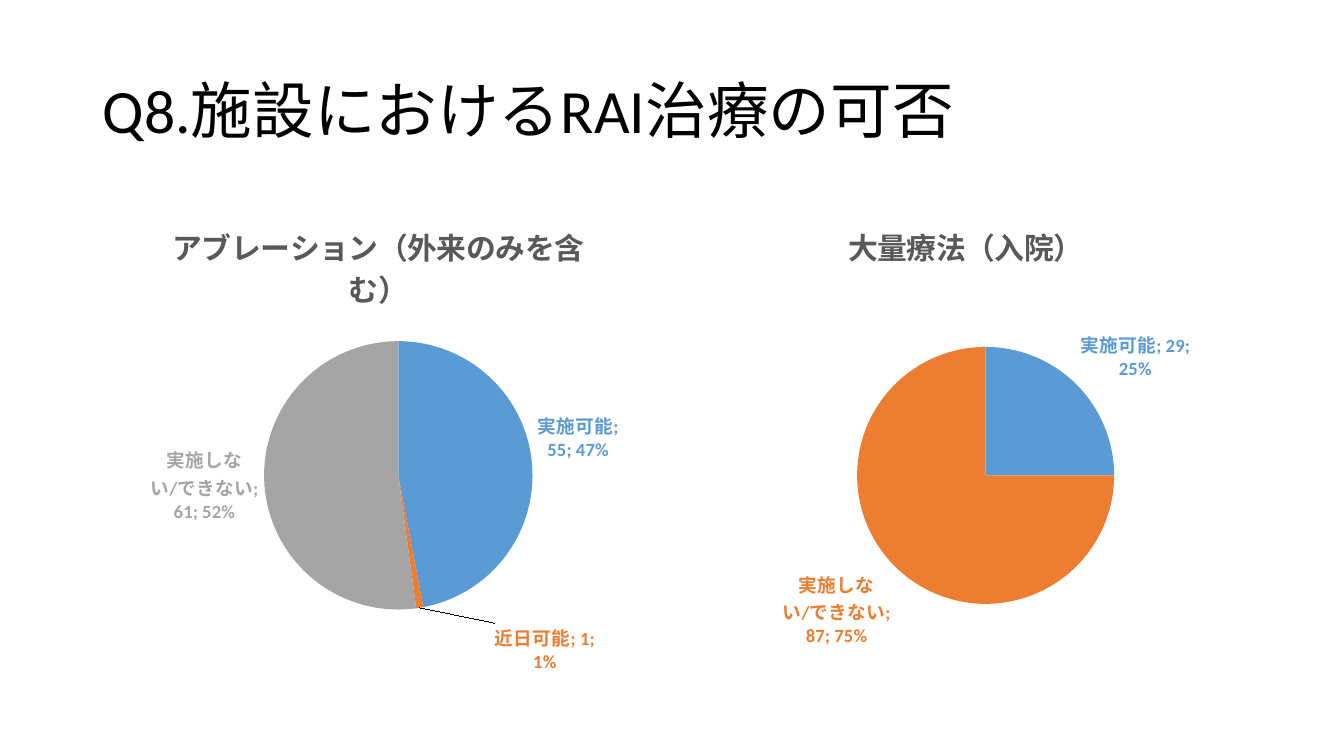
import lxml.etree
import pptx
import pptx.chart.data
import pptx.dml.color
import pptx.enum.chart
import pptx.enum.text
import pptx.oxml.ns
import pptx.util

WIDTH = pptx.util.Inches(13.33)
HEIGHT = pptx.util.Inches(7.5)
FONT = "Calibri"
SLICE_COLORS = ["5B9BD5", "ED7D31", "A5A5A5"]
MARGIN = 0.069
COLUMN_STEP = 0.437
CHART_WIDTH = 0.425
CHART_TOP = 0.267
CHART_HEIGHT = 0.635


def color(value):
    return pptx.dml.color.RGBColor.from_string(value)


def style_font(font, size, value, bold=False):
    font.name = FONT
    font.size = pptx.util.Pt(size)
    font.bold = bold
    font.color.rgb = color(value)


def add_run(paragraph, text, size, value, bold=False):
    run = paragraph.add_run()
    run.text = text
    style_font(run.font, size, value, bold)


def add_element(parent, tag, value=None):
    element = lxml.etree.SubElement(parent, pptx.oxml.ns.qn(tag))
    if value is not None:
        element.set("val", str(value))
    return element


def make_layout(settings):
    layout = lxml.etree.Element(pptx.oxml.ns.qn("c:layout"))
    manual = add_element(layout, "c:manualLayout")
    for name, value in settings.items():
        add_element(manual, f"c:{name}", value)
    return layout


def place_plot(chart, left, top, width, height):
    plot_area = chart.element.xpath("c:chart/c:plotArea")[0]
    for layout in plot_area.xpath("c:layout"):
        plot_area.remove(layout)
    plot_area.insert(0, make_layout({
        "layoutTarget": "inner", "xMode": "edge", "yMode": "edge",
        "x": left, "y": top, "w": width, "h": height}))


def style_slice(point, value):
    point.format.fill.solid()
    point.format.fill.fore_color.rgb = color(value)
    point.format.line.fill.background()
    label = point.data_label
    style_font(label.font, 13.3, value, True)
    label.position = pptx.enum.chart.XL_LABEL_POSITION.OUTSIDE_END


def complete_labels(chart, offsets):
    for index, label in enumerate(chart.element.xpath(".//c:dLbl")):
        for name in ("showVal", "showCatName", "showPercent"):
            label.xpath(f"c:{name}")[0].set("val", "1")
        add_element(label, "c:separator").text = "; "
        if index in offsets:
            x, y = offsets[index]
            label.insert(1, make_layout({"x": x, "y": y}))


def add_pie(slide, column, title, values, plot, offsets):
    data = pptx.chart.data.CategoryChartData()
    data.categories = list(values)
    data.add_series(title, list(values.values()))
    frame = slide.shapes.add_chart(
        pptx.enum.chart.XL_CHART_TYPE.PIE,
        int(WIDTH * (MARGIN + column * COLUMN_STEP)), int(HEIGHT * CHART_TOP),
        int(WIDTH * CHART_WIDTH), int(HEIGHT * CHART_HEIGHT), data)
    chart = frame.chart
    style_font(chart.font, 10, "000000")
    chart.has_legend = False
    chart.has_title = True
    add_run(chart.chart_title.text_frame.paragraphs[0], title, 21.3, "595959", True)
    chart.chart_title.include_in_layout = False
    pie = chart.plots[0]
    pie.vary_by_categories = True
    for index in range(len(values)):
        style_slice(pie.series[0].points[index], SLICE_COLORS[index])
    complete_labels(chart, offsets)
    place_plot(chart, *plot)


def add_heading(slide, text):
    box = slide.shapes.add_textbox(
        int(WIDTH * MARGIN), int(HEIGHT * 0.053),
        int(WIDTH * 0.863), int(HEIGHT * 0.193))
    frame = box.text_frame
    frame.word_wrap = True
    frame.vertical_anchor = pptx.enum.text.MSO_ANCHOR.MIDDLE
    paragraph = frame.paragraphs[0]
    paragraph.line_spacing = 0.9
    add_run(paragraph, text, 44, "000000")


def main():
    presentation = pptx.Presentation()
    presentation.slide_width = WIDTH
    presentation.slide_height = HEIGHT
    slide = presentation.slides.add_slide(presentation.slide_layouts[6])
    add_heading(slide, "Q8.施設におけるRAI治療の可否")
    add_pie(slide, 0, "アブレーション（外来のみを含む）",
            {"実施可能": 55, "近日可能": 1, "実施しない/できない": 61},
            (0.3, 0.29, 0.47, 0.56), {1: (0.13, 0.02)})
    add_pie(slide, 1, "大量療法（入院）",
            {"実施可能": 29, "実施しない/できない": 87},
            (0.31, 0.3, 0.45, 0.54), {})
    presentation.save("out.pptx")


if __name__ == "__main__":
    main()
